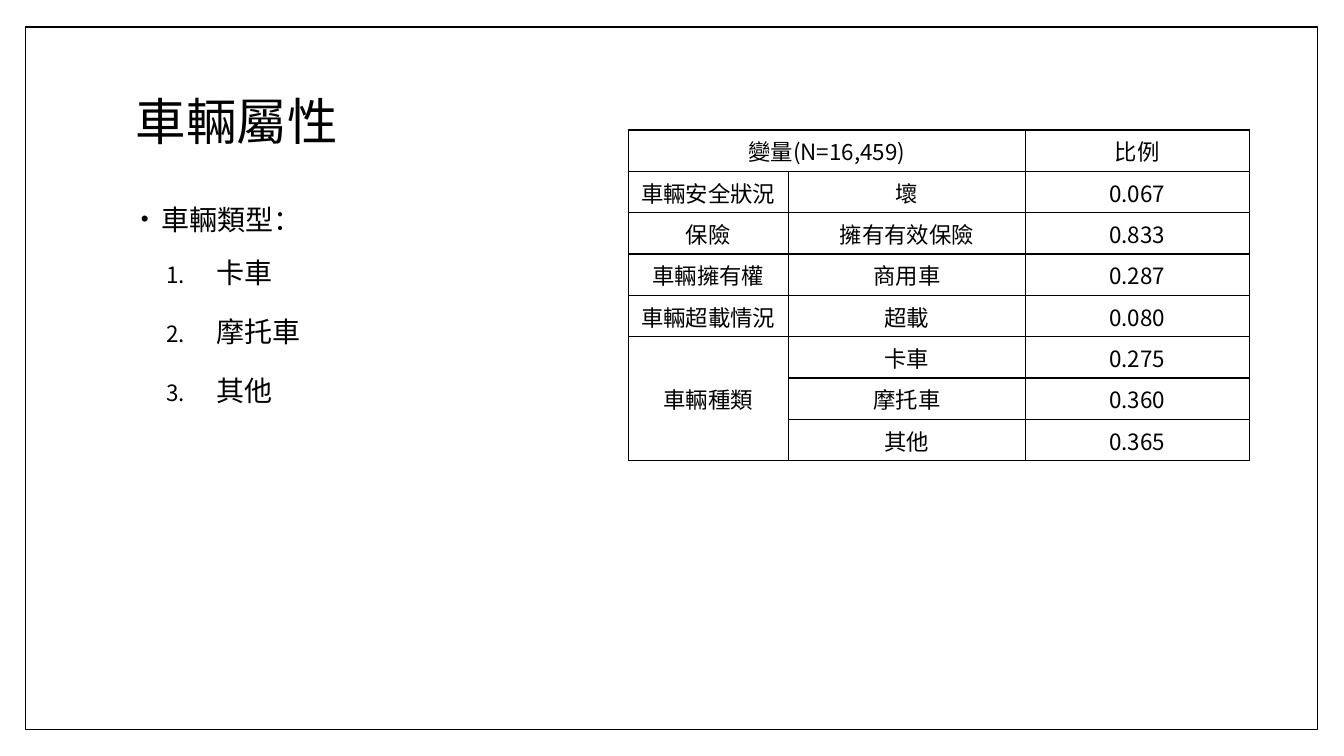
from dataclasses import dataclass

from lxml import etree
from pptx import Presentation
from pptx import util as u
from pptx.dml.color import RGBColor
from pptx.enum import shapes, text
from pptx.oxml import ns

BLACK = RGBColor(0, 0, 0)
WHITE = RGBColor(255, 255, 255)
FONT = "Noto Sans CJK SC"


@dataclass(frozen=True)
class ListItem:
    words: str
    numbered: bool = True


@dataclass(frozen=True)
class Merge:
    first: tuple[int, int]
    last: tuple[int, int]


LIST_ITEMS = [
    ListItem("車輛類型：", numbered=False),
    ListItem("卡車"),
    ListItem("摩托車"),
    ListItem("其他"),
]

TABLE_ROWS = [
    ("變量(N=16,459)", "", "比例"),
    ("車輛安全狀況", "壞", "0.067"),
    ("保險", "擁有有效保險", "0.833"),
    ("車輛擁有權", "商用車", "0.287"),
    ("車輛超載情況", "超載", "0.080"),
    ("車輛種類", "卡車", "0.275"),
    ("", "摩托車", "0.360"),
    ("", "其他", "0.365"),
]
MERGES = [Merge((0, 0), (0, 1)), Merge((5, 0), (7, 0))]
COLUMN_WIDTHS = [1.59, 2.35, 2.22]
ROW_HEIGHT = 0.41


def add_child(parent, tag: str, **attributes: str):
    return etree.SubElement(parent, ns.qn(tag), attributes)


def write(para, words: str, *, size: float, align=None, line=None,
          before: float | None = None, after: float | None = None) -> None:
    """Put formatted text into a paragraph."""
    para.alignment = align
    para.line_spacing = line
    para.space_before = None if before is None else u.Pt(before)
    para.space_after = None if after is None else u.Pt(after)
    span = para.add_run()
    span.text = words
    span.font.size = u.Pt(size)
    span.font.name = FONT
    span.font.color.rgb = BLACK
    add_child(span.font._element, "a:ea", typeface=FONT)


def add_bullet(para, item: ListItem) -> None:
    left, hanging = (0.8, -0.5) if item.numbered else (0.25, -0.2)
    properties = para._p.get_or_add_pPr()
    properties.set("marL", str(u.Inches(left)))
    properties.set("indent", str(u.Inches(hanging)))
    color = add_child(properties, "a:buClr")
    add_child(color, "a:srgbClr", val=str(BLACK))
    add_child(properties, "a:buSzPct", val="80000")
    if item.numbered:
        add_child(properties, "a:buFont", typeface=FONT)
        add_child(properties, "a:buAutoNum", type="arabicPeriod")
    else:
        add_child(properties, "a:buFont", typeface="Arial")
        add_child(properties, "a:buChar", char="•")


def add_text_box(page, left: float, top: float, width: float, height: float, anchor):
    box = page.shapes.add_textbox(*map(u.Inches, (left, top, width, height)))
    frame = box.text_frame
    frame.word_wrap = True
    frame.vertical_anchor = anchor
    return frame


def add_borders(cell) -> None:
    properties = cell._tc.get_or_add_tcPr()
    for side in ("a:lnL", "a:lnR", "a:lnT", "a:lnB"):
        border = add_child(properties, side, w=str(u.Pt(1)))
        fill = add_child(border, "a:solidFill")
        add_child(fill, "a:srgbClr", val=str(BLACK))


def add_frame(page) -> None:
    box = page.shapes.add_shape(shapes.MSO_SHAPE.RECTANGLE,
                                *map(u.Inches, (0.25, 0.27, 12.82, 6.97)))
    box.shadow.inherit = False
    box.fill.solid()
    box.fill.fore_color.rgb = WHITE
    box.line.color.rgb = BLACK
    box.line.width = u.Pt(1)


def add_list(page) -> None:
    frame = add_text_box(page, 1.25, 1.79, 10.8, 4.88, text.MSO_ANCHOR.TOP)
    for index, item in enumerate(LIST_ITEMS):
        para = frame.add_paragraph() if index else frame.paragraphs[0]
        before, after = (2, 4) if item.numbered else (14, 0)
        write(para, item.words, size=20, line=1.5, before=before, after=after)
        if item.numbered:
            para.level = 1
        add_bullet(para, item)


def add_vehicle_table(page) -> None:
    holder = page.shapes.add_table(
        len(TABLE_ROWS), len(COLUMN_WIDTHS), u.Inches(6.23), u.Inches(1.29),
        u.Inches(sum(COLUMN_WIDTHS)), u.Inches(ROW_HEIGHT * len(TABLE_ROWS)))
    table = holder.table
    table.first_row = table.horz_banding = False
    for column, width in zip(table.columns, COLUMN_WIDTHS):
        column.width = u.Inches(width)
    for row, values in zip(table.rows, TABLE_ROWS):
        row.height = u.Inches(ROW_HEIGHT)
        for cell, value in zip(row.cells, values):
            cell.vertical_anchor = text.MSO_ANCHOR.MIDDLE
            add_borders(cell)
            cell.fill.background()
            if value:
                write(cell.text_frame.paragraphs[0], value, size=16,
                      align=text.PP_ALIGN.CENTER)
    for merge in MERGES:
        table.cell(*merge.first).merge(table.cell(*merge.last))


def main() -> None:
    deck = Presentation()
    deck.slide_width, deck.slide_height = u.Inches(13.33), u.Inches(7.5)
    page = deck.slides.add_slide(deck.slide_layouts[6])

    # Border around the page
    add_frame(page)

    # Title and list of vehicle types
    title = add_text_box(page, 1.25, 0.67, 10.8, 1.12, text.MSO_ANCHOR.MIDDLE)
    write(title.paragraphs[0], "車輛屬性", size=36, line=0.9)
    add_list(page)

    # Table of vehicle attributes
    add_vehicle_table(page)

    deck.save("out.pptx")


if __name__ == "__main__":
    main()
